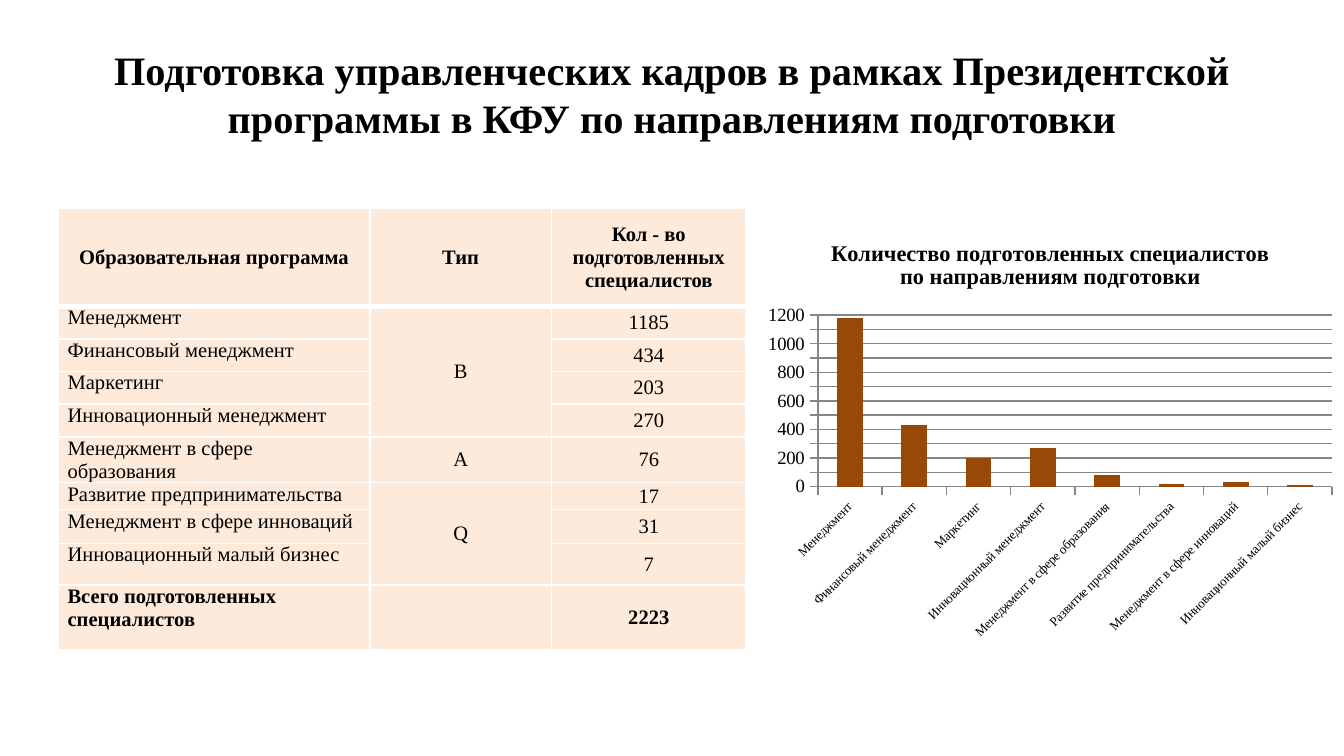
from lxml import etree
from pptx import Presentation
from pptx.chart.data import CategoryChartData
from pptx.dml.color import RGBColor
from pptx.enum.chart import XL_CHART_TYPE as ChartType, XL_TICK_MARK as TickMark
from pptx.enum.text import MSO_ANCHOR as Anchor, MSO_AUTO_SIZE as AutoSize, PP_ALIGN as Align
from pptx.oxml import parse_xml
from pptx.oxml.ns import nsdecls, qn
from pptx.util import Pt

FONT = "Times New Roman"
COLORS = {"text": "000000", "cell": "FDEADA", "border": "FFFFFF",
          "bar": "984807", "axis": "868686"}
TITLE = ("Подготовка управленческих кадров в рамках Президентской "
         "программы в КФУ по направлениям подготовки")
HEADERS = ["Образовательная программа", "Тип", "Кол - во подготовленных специалистов"]
PROGRAMS = [
    ("Менеджмент", "В", 1185),
    ("Финансовый менеджмент", "", 434),
    ("Маркетинг", "", 203),
    ("Инновационный менеджмент", "", 270),
    ("Менеджмент в сфере образования", "А", 76),
    ("Развитие предпринимательства", "Q", 17),
    ("Менеджмент в сфере инноваций", "", 31),
    ("Инновационный малый бизнес", "", 7),
]
TOTAL = ("Всего подготовленных специалистов", "", sum(row[2] for row in PROGRAMS))
TYPE_SPANS = [(1, 4), (6, 8)]
COLUMN_WIDTHS = [167, 97.2, 104.4]
ROW_HEIGHTS = [52.5] + [17.5] * 4 + [24.5, 14.5, 18, 22.5, 34.5]
PLOT_LAYOUT = {"x": 0.104, "y": 0.224, "w": 0.876, "h": 0.4}


def color(name):
    return RGBColor.from_string(COLORS[name])


def format_font(font, size, bold=False):
    font.name = FONT
    font.size = Pt(size)
    font.bold = bold
    font.color.rgb = color("text")


def add_text(paragraph, text, size, bold=False, align=Align.CENTER):
    paragraph.alignment = align
    run = paragraph.add_run()
    run.text = text
    format_font(run.font, size, bold)


def add_title(slide, left, top, width, height):
    title = slide.shapes.title
    title.left, title.top = Pt(left), Pt(top)
    title.width, title.height = Pt(width), Pt(height)
    frame = title.text_frame
    frame.word_wrap = True
    frame.auto_size = AutoSize.NONE
    frame.vertical_anchor = Anchor.MIDDLE
    add_text(frame.paragraphs[0], TITLE, 21.6, True)


def set_borders(cell, bottom_width):
    properties = cell._tc.get_or_add_tcPr()
    for side, width in zip("LRTB", (1, 1, 1, bottom_width)):
        properties.append(parse_xml(
            f'<a:ln{side} {nsdecls("a")} w="{Pt(width)}"><a:solidFill>'
            f'<a:srgbClr val="{COLORS["border"]}"/></a:solidFill></a:ln{side}>'))


def add_program_table(slide, left, top, width, height):
    rows = [HEADERS, *PROGRAMS, TOTAL]
    table = slide.shapes.add_table(
        len(rows), len(HEADERS), Pt(left), Pt(top), Pt(width), Pt(height)).table
    for column, column_width in zip(table.columns, COLUMN_WIDTHS):
        column.width = Pt(column_width)
    for row, row_height in zip(table.rows, ROW_HEIGHTS):
        row.height = Pt(row_height)
    for row_index, values in enumerate(rows):
        header = row_index == 0
        bold = header or values is TOTAL
        for column_index, value in enumerate(values):
            cell = table.cell(row_index, column_index)
            name_cell = column_index == 0 and not header
            cell.margin_left = cell.margin_right = Pt(5)
            cell.margin_top = cell.margin_bottom = 0
            cell.vertical_anchor = Anchor.TOP if name_cell else Anchor.MIDDLE
            set_borders(cell, 3 if header else 1)
            cell.fill.solid()
            cell.fill.fore_color.rgb = color("cell")
            if value != "":
                add_text(cell.text_frame.paragraphs[0], str(value), 11, bold,
                         Align.LEFT if name_cell else Align.CENTER)
    for first, last in TYPE_SPANS:
        table.cell(first, 1).merge(table.cell(last, 1))


def set_plot_layout(chart):
    plot_area = chart._chartSpace.chart.plotArea
    for old in plot_area.findall(qn("c:layout")):
        plot_area.remove(old)
    layout = etree.Element(qn("c:layout"))
    manual = etree.SubElement(layout, qn("c:manualLayout"))
    settings = {"layoutTarget": "inner", "xMode": "edge", "yMode": "edge", **PLOT_LAYOUT}
    for tag, value in settings.items():
        etree.SubElement(manual, qn(f"c:{tag}")).set("val", f"{value}")
    plot_area.insert(0, layout)


def format_axis(axis, size):
    axis.major_tick_mark = TickMark.OUTSIDE
    axis.minor_tick_mark = TickMark.NONE
    axis.format.line.color.rgb = color("axis")
    format_font(axis.tick_labels.font, size)


def add_program_chart(slide, left, top, width, height):
    data = CategoryChartData()
    data.categories = [row[0] for row in PROGRAMS]
    data.add_series("Количество", [round(row[2], -1) for row in PROGRAMS])
    chart = slide.shapes.add_chart(
        ChartType.COLUMN_CLUSTERED, Pt(left), Pt(top), Pt(width), Pt(height), data).chart
    format_font(chart.font, 10)
    chart.has_legend = False
    chart.has_title = True
    add_text(chart.chart_title.text_frame.paragraphs[0],
             "Количество подготовленных специалистов по направлениям подготовки", 12, True)
    chart.chart_title.include_in_layout = False
    plot = chart.plots[0]
    plot.gap_width = 150
    plot.vary_by_categories = False
    bars = plot.series[0].format
    bars.fill.solid()
    bars.fill.fore_color.rgb = color("bar")
    format_axis(chart.category_axis, 7)
    chart.category_axis._element.txPr.find(qn("a:bodyPr")).set("rot", "-2700000")
    values = chart.value_axis
    format_axis(values, 10)
    values.minimum_scale, values.maximum_scale, values.major_unit = 0, 1200, 100
    values.has_major_gridlines = True
    values.major_gridlines.format.line.color.rgb = color("axis")
    set_plot_layout(chart)


def main():
    presentation = Presentation()
    presentation.slide_width, presentation.slide_height = Pt(720), Pt(405)
    slide = presentation.slides.add_slide(presentation.slide_layouts[5])
    add_title(slide, 36, 16.2, 648, 67.5)
    add_program_table(slide, 31.2, 111.6, sum(COLUMN_WIDTHS), sum(ROW_HEIGHTS))
    add_program_chart(slide, 405.4, 117.4, 314.6, 229.7)
    presentation.save("out.pptx")


if __name__ == "__main__":
    main()
